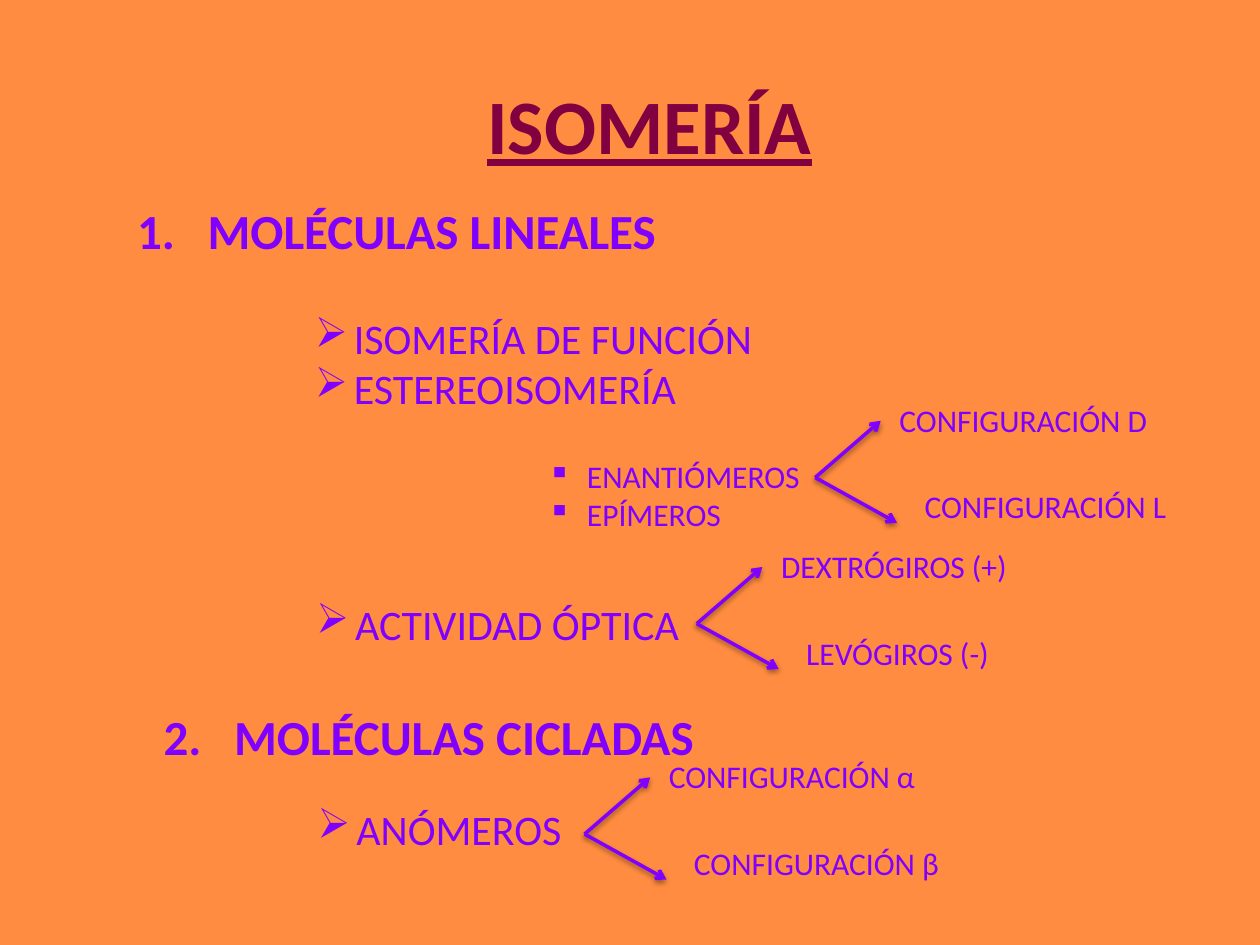
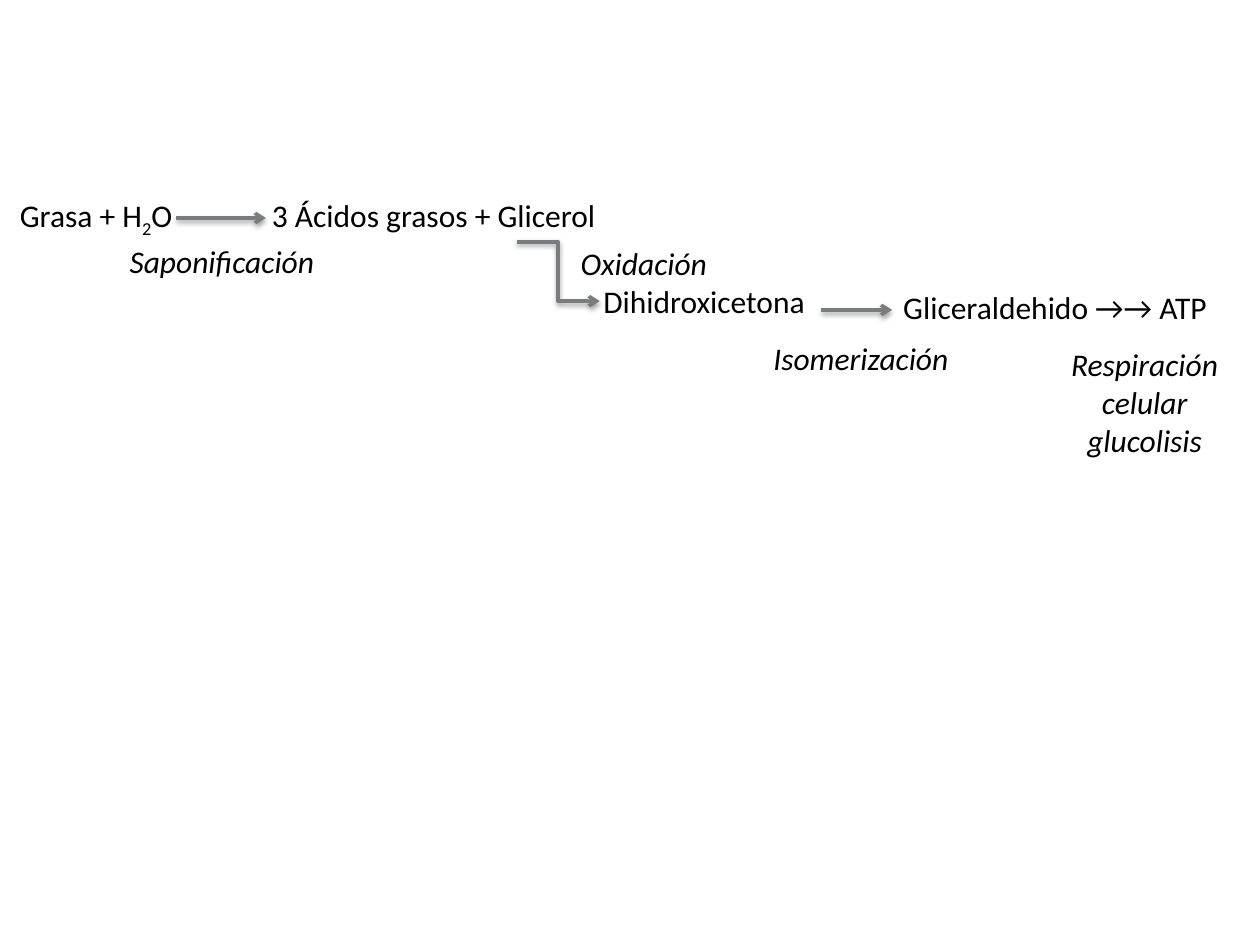
"""Build two slides: an outline of isomerism and the path from fat to ATP."""
from lxml import etree
from pptx import Presentation
from pptx.dml.color import RGBColor
from pptx.enum.shapes import MSO_CONNECTOR
from pptx.enum.text import MSO_AUTO_SIZE, PP_ALIGN
from pptx.oxml.ns import qn
from pptx.util import Inches, Pt

STRAIGHT, ELBOW = MSO_CONNECTOR.STRAIGHT, MSO_CONNECTOR.ELBOW
CENTER = PP_ALIGN.CENTER
FONT = "Calibri"
ORANGE, WHITE, BLACK = "FF8C40", "FFFFFF", "000000"
MAROON, VIOLET, GRAY = "800040", "8000FF", "797B7E"
HEAD, ITEM, BODY = 28, 24, 18
SUB = "~"

TITLE = ("ISOMERÍA", (3.77, 0.57, 2.81, 0.84))
HEADINGS = [
    ("MOLÉCULAS LINEALES", (0.99, 1.54, 4.33, 0.57)),
    ("MOLÉCULAS CICLADAS", (1.2, 5.56, 4.42, 0.57)),
]
LISTS = [
    ("ISOMERÍA DE FUNCIÓN\nESTEREOISOMERÍA", (2.4, 2.43, 3.68, 0.91), "➢", ITEM),
    ("ENANTIÓMEROS\nEPÍMEROS", (4.25, 3.58, 2.22, 0.71), "▪", BODY),
    ("ACTIVIDAD ÓPTICA", (2.41, 4.7, 3.12, 0.5), "➢", ITEM),
    ("ANÓMEROS", (2.42, 6.33, 2.15, 0.5), "➢", ITEM),
]
FORKS = [
    ((6.47, 3.79), ("CONFIGURACIÓN D", 2.19), ("CONFIGURACIÓN L", 2.15)),
    ((5.53, 4.95), ("DEXTRÓGIROS (+)", 2.02), ("LEVÓGIROS (-)", 1.67)),
    ((4.64, 6.62), ("CONFIGURACIÓN α", 2.18), ("CONFIGURACIÓN β", 2.17)),
]
FORK_TIPS = [(0.52, -0.45), (0.65, 0.36)]
FORK_LABELS = [(0.57, -0.66), (0.77, 0.03)]
LINE_H = 0.4

REACTION = ("Grasa + H~2~O\t\t3 Ácidos grasos + Glicerol", (0.06, 1.51, 7.33, LINE_H))
TAB_STOPS = (1.5, 2)
SUBSTANCES = [
    ("Dihidroxicetona", (4.69, 2.19, 1.83, LINE_H)),
    ("Gliceraldehido →→ ATP", (7.07, 2.24, 2.78, LINE_H)),
]
PROCESSES = [
    ("Saponificación", (0.93, 1.87, 1.75, LINE_H)),
    ("Oxidación", (4.51, 1.89, 1.28, LINE_H)),
    ("Isomerización", (6.04, 2.64, 1.67, LINE_H)),
    ("Respiración\ncelular\nglucolisis", (8.36, 2.69, 1.45, 1.01)),
]
STEPS = [
    ((1.4, 1.73), (2.11, 1.73), STRAIGHT),
    ((4.1, 1.92), (4.76, 2.39), ELBOW),
    ((6.52, 2.46), (7.08, 2.46), STRAIGHT),
]


def rgb(color):
    return RGBColor.from_string(color)


def child(parent, tag, **attrs):
    return etree.SubElement(parent, qn("a:" + tag), {k: str(v) for k, v in attrs.items()})


def add_slide(prs, color):
    s = prs.slides.add_slide(prs.slide_layouts[6])
    s.background.fill.solid()
    s.background.fill.fore_color.rgb = rgb(color)
    return s


def add_text(s, text, box, size, color, bold=None, italic=None, underline=None,
             align=None, wrap=False):
    tf = s.shapes.add_textbox(*map(Inches, box)).text_frame
    tf.word_wrap = wrap
    tf.auto_size = MSO_AUTO_SIZE.SHAPE_TO_FIT_TEXT
    tf.text = text
    for p in tf.paragraphs:
        p.alignment = align
        first, *rest = p.text.split(SUB)
        p.runs[0].text = first
        for part in rest:
            p.add_run().text = part
        for i, r in enumerate(p.runs):
            f = r.font
            f.name, f.size, f.color.rgb = FONT, Pt(size), rgb(color)
            f.bold, f.italic, f.underline = bold, italic, underline
            if i % 2:
                f._element.set("baseline", "-25000")
    return tf


def add_bullets(tf, indent, tag, **attrs):
    for p in tf.paragraphs:
        pPr = p._p.get_or_add_pPr()
        pPr.set("marL", str(Inches(indent)))
        pPr.set("indent", str(-Inches(indent)))
        child(pPr, tag, **attrs)


def add_arrow(s, start, end, color, kind=STRAIGHT):
    line = s.shapes.add_connector(kind, *map(Inches, start + end))
    line.line.color.rgb = rgb(color)
    line.line.width = Pt(2)
    spPr = line._element.spPr
    child(line.line._get_or_add_ln(), "tailEnd", type="arrow")
    shadow = child(child(spPr, "effectLst"), "outerShdw", blurRad=Pt(3.1),
                   dist=Pt(1.6), dir=90 * 60000, rotWithShape=0)
    child(child(shadow, "srgbClr", val=BLACK), "alpha", val=38000)


def add_fork(s, origin, labels):
    x, y = origin
    for (label, width), tip, (dx, dy) in zip(labels, FORK_TIPS, FORK_LABELS):
        add_arrow(s, origin, (x + tip[0], y + tip[1]), VIOLET)
        add_text(s, label, (x + dx, y + dy, width, LINE_H), BODY, VIOLET)


def build_outline(prs):
    s = add_slide(prs, ORANGE)
    add_text(s, *TITLE, 44, MAROON, bold=True, underline=True)
    for number, (text, box) in enumerate(HEADINGS, 1):
        tf = add_text(s, text, box, HEAD, VIOLET, bold=True)
        add_bullets(tf, 0.56, "buAutoNum", type="arabicPeriod", startAt=number)
    for text, box, mark, size in LISTS:
        add_bullets(add_text(s, text, box, size, VIOLET), 0.31, "buChar", char=mark)
    for origin, *labels in FORKS:
        add_fork(s, origin, labels)


def build_pathway(prs):
    s = add_slide(prs, WHITE)
    tf = add_text(s, *REACTION, BODY, BLACK, wrap=True)
    tabs = child(tf.paragraphs[0]._p.get_or_add_pPr(), "tabLst")
    for stop in TAB_STOPS:
        child(tabs, "tab", pos=Inches(stop), algn="l")
    for text, box in SUBSTANCES:
        add_text(s, text, box, BODY, BLACK)
    for text, box in PROCESSES:
        add_text(s, text, box, BODY, BLACK, italic=True,
                 align=CENTER if "\n" in text else None)
    for start, end, kind in STEPS:
        add_arrow(s, start, end, GRAY, kind)


def main():
    prs = Presentation()
    prs.slide_width, prs.slide_height = Inches(10), Inches(7.5)
    build_outline(prs)
    build_pathway(prs)
    prs.save("out.pptx")


if __name__ == "__main__":
    main()
